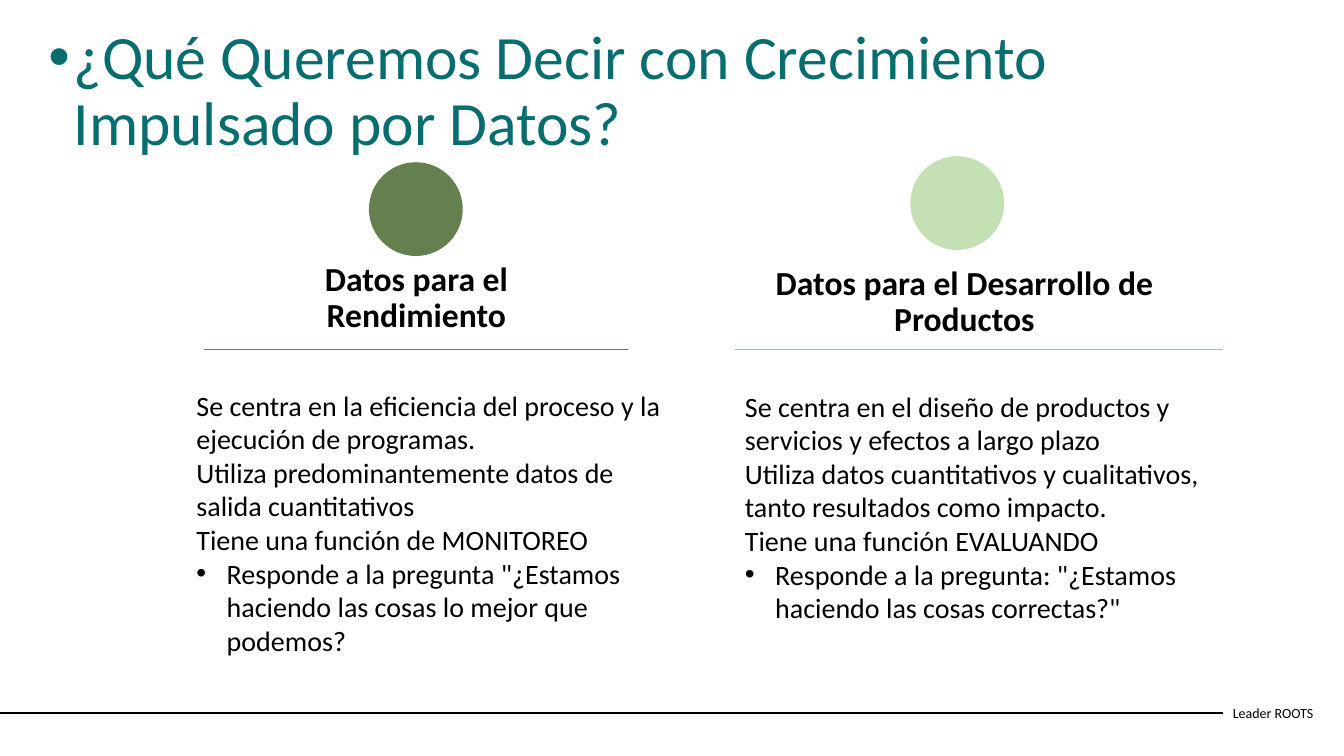
from lxml import etree
from pptx import Presentation
from pptx.dml.color import RGBColor
from pptx.enum.shapes import MSO_CONNECTOR, MSO_SHAPE
from pptx.enum.text import MSO_ANCHOR, MSO_AUTO_SIZE, PP_ALIGN
from pptx.oxml.ns import qn
from pptx.util import Inches, Pt

STRAIGHT = MSO_CONNECTOR.STRAIGHT
OVAL = MSO_SHAPE.OVAL
TOP, MIDDLE = MSO_ANCHOR.TOP, MSO_ANCHOR.MIDDLE
LEFT, CENTER = PP_ALIGN.LEFT, PP_ALIGN.CENTER
NO_AUTOFIT = MSO_AUTO_SIZE.NONE

FONT = "Calibri"
COLORS = {
    "title": "086D6E",
    "text": "000000",
    "performance": "65804F",
    "development": "C5E0B4",
    "development rule": "ACC199",
}
CIRCLE_SIZE = 0.93
HEADING_HEIGHT = 0.93
RULE_TOP = 3.47
BODY_HEIGHT = 2.79

# Boxes are (left, top, width); rules are (left, right).
COLUMNS = [
    {
        "heading": "Datos para el Rendimiento",
        "heading_box": (2.45, 2.5, 3.36),
        "circle_at": (3.66, 1.61),
        "circle_color": "performance",
        "rule": (2.02, 6.23),
        "rule_color": "performance",
        "rule_width": 0.5,
        "body_box": (1.85, 3.8, 4.87),
        "points": [
            "Se centra en la eficiencia del proceso y la ejecución de programas.",
            "Utiliza predominantemente datos de salida cuantitativos",
            "Tiene una función de MONITOREO",
        ],
        "question": 'Responde a la pregunta "¿Estamos haciendo las cosas lo mejor que podemos?',
    },
    {
        "heading": "Datos para el Desarrollo de Productos",
        "heading_box": (7.29, 2.54, 4.55),
        "circle_at": (9.03, 1.55),
        "circle_color": "development",
        "rule": (7.29, 12.13),
        "rule_color": "development rule",
        "rule_width": 1,
        "body_box": (7.29, 3.81, 4.83),
        "points": [
            "Se centra en el diseño de productos y servicios y efectos a largo plazo",
            "Utiliza datos cuantitativos y cualitativos, tanto resultados como impacto.",
            "Tiene una función EVALUANDO",
        ],
        "question": 'Responde a la pregunta: "¿Estamos haciendo las cosas correctas?"',
    },
]


def rgb(name):
    return RGBColor.from_string(COLORS[name])


def format_paragraph(paragraph, size, color="text", bold=False, align=LEFT, spacing=1.0):
    paragraph.alignment = align
    paragraph.line_spacing = spacing
    paragraph.space_before = Pt(0)
    font = paragraph.font
    font.name = FONT
    font.size = Pt(size)
    font.bold = bold
    font.color.rgb = rgb(color)


def add_bullet(paragraph, indent):
    """Give the paragraph a round bullet with a hanging indent in inches."""
    properties = paragraph._p.get_or_add_pPr()
    properties.set("marL", str(Inches(indent)))
    properties.set("indent", str(Inches(-indent)))
    bullet_font = etree.SubElement(properties, qn("a:buFont"))
    bullet_font.set("typeface", "Arial")
    etree.SubElement(properties, qn("a:buChar")).set("char", "•")


def add_text_box(slide, left, top, width, height, anchor=TOP):
    box = slide.shapes.add_textbox(Inches(left), Inches(top), Inches(width), Inches(height))
    frame = box.text_frame
    frame.word_wrap = True
    frame.vertical_anchor = anchor
    return frame


def add_rule(slide, left, right, top, color, width):
    rule = slide.shapes.add_connector(
        STRAIGHT, Inches(left), Inches(top), Inches(right), Inches(top))
    rule.line.color.rgb = rgb(color)
    rule.line.width = Pt(width)
    etree.SubElement(rule._element.spPr, qn("a:effectLst"))


def add_title(slide, left, top, width, height):
    title = slide.shapes.title
    title.left, title.top = Inches(left), Inches(top)
    title.width, title.height = Inches(width), Inches(height)
    frame = title.text_frame
    frame.text = "¿Qué Queremos Decir con Crecimiento Impulsado por Datos?"
    frame.word_wrap = True
    frame.auto_size = NO_AUTOFIT
    frame.vertical_anchor = TOP
    paragraph = frame.paragraphs[0]
    add_bullet(paragraph, 0.25)
    format_paragraph(paragraph, 44, "title", spacing=0.9)


def add_heading(slide, column):
    """Place a column's circle, heading and the rule below them."""
    left, top = column["circle_at"]
    circle = slide.shapes.add_shape(
        OVAL, Inches(left), Inches(top), Inches(CIRCLE_SIZE), Inches(CIRCLE_SIZE))
    circle.shadow.inherit = False
    circle.fill.solid()
    circle.fill.fore_color.rgb = rgb(column["circle_color"])
    circle.line.fill.background()

    frame = add_text_box(slide, *column["heading_box"], HEADING_HEIGHT, MIDDLE)
    frame.text = column["heading"]
    format_paragraph(frame.paragraphs[0], 24, bold=True, align=CENTER, spacing=0.9)
    add_rule(slide, *column["rule"], RULE_TOP, column["rule_color"], column["rule_width"])


def add_body(slide, column):
    frame = add_text_box(slide, *column["body_box"], BODY_HEIGHT)
    frame.text = "\n".join(column["points"] + [column["question"]])
    add_bullet(frame.paragraphs[-1], 0.3)
    for paragraph in frame.paragraphs:
        format_paragraph(paragraph, 20)


def add_footer(slide, left, top, width, height):
    add_rule(slide, 0, left, 7.07, "text", 1.5)
    frame = add_text_box(slide, left, top, width, height, MIDDLE)
    frame.text = "Leader ROOTS"
    format_paragraph(frame.paragraphs[0], 10)


def main():
    presentation = Presentation()
    presentation.slide_width = Inches(13.33)
    presentation.slide_height = Inches(7.5)
    slide = presentation.slides.add_slide(presentation.slide_layouts[5])
    add_footer(slide, 12.13, 6.87, 1.1, 0.4)
    add_title(slide, 0.38, 0.21, 12.6, 0.88)
    for column in COLUMNS:
        add_heading(slide, column)
        add_body(slide, column)
    presentation.save("out.pptx")


if __name__ == "__main__":
    main()
